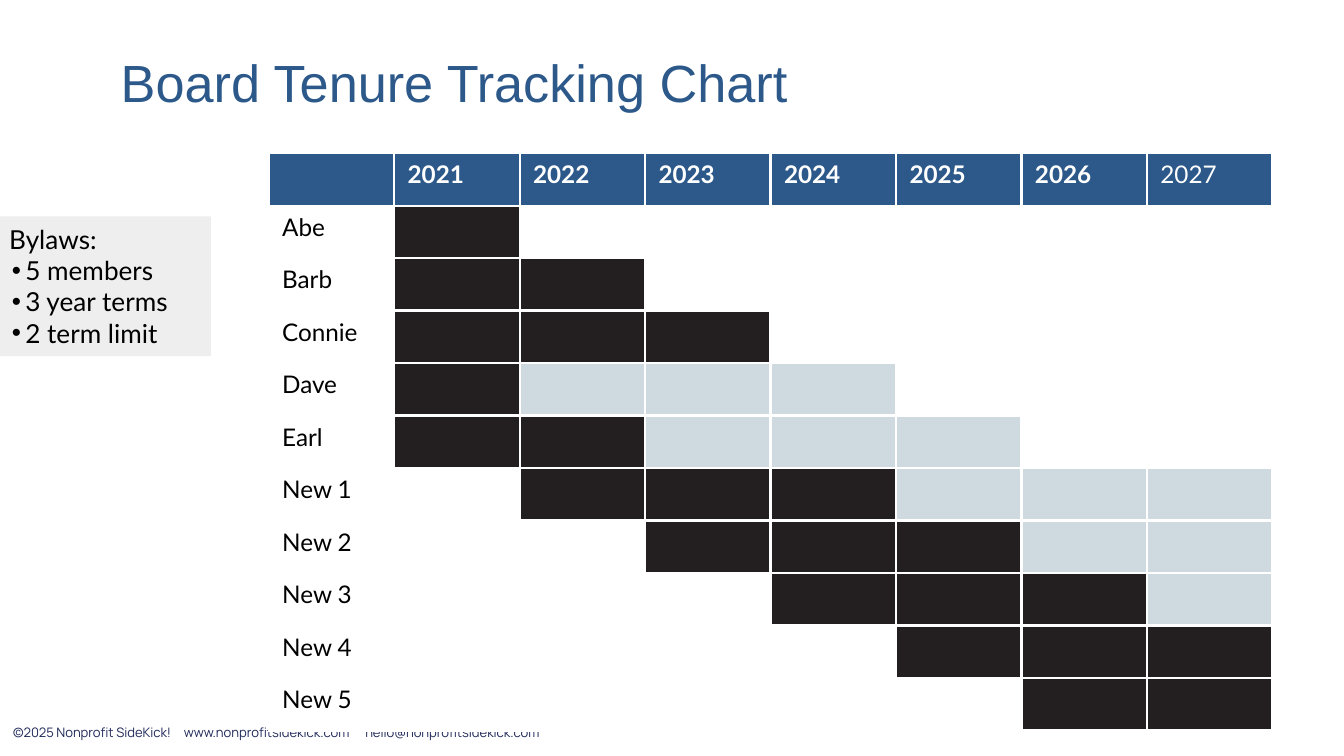
"""Build the board tenure tracking slide."""
from lxml.etree import SubElement
from pptx import Presentation
from pptx.dml.color import RGBColor
from pptx.enum.shapes import MSO_SHAPE
from pptx.enum.text import MSO_ANCHOR, PP_ALIGN
from pptx.oxml.ns import qn
from pptx.util import Inches, Pt

BLUE = RGBColor(0x2C, 0x59, 0x8A)
NAVY = RGBColor(0x20, 0x29, 0x59)
BLACK = RGBColor(0, 0, 0)
WHITE = RGBColor(0xFF, 0xFF, 0xFF)
FIRST_TERM = RGBColor(0x23, 0x1F, 0x20)
SECOND_TERM = RGBColor(0xCF, 0xD9, 0xE0)
PANEL_GRAY = RGBColor(0xEE, 0xEE, 0xEE)


def add_run(paragraph, text, size, font, color, bold=False):
    run = paragraph.add_run()
    run.text = text
    run.font.size = Pt(size)
    run.font.name = font
    run.font.color.rgb = color
    run.font.bold = bold


def add_text_box(left, top, width, height, top_inset):
    box = slide.shapes.add_textbox(Inches(left), Inches(top), Inches(width), Inches(height))
    frame = box.text_frame
    frame.word_wrap = True
    frame.margin_left = frame.margin_right = frame.margin_bottom = Inches(0.1)
    frame.margin_top = Inches(top_inset)
    return frame.paragraphs[0]


prs = Presentation()
prs.slide_width = Inches(10)
prs.slide_height = Inches(10) * 9 // 16
slide = prs.slides.add_slide(prs.slide_layouts[6])

footer = add_text_box(0, 5.31, 7.2, 0.85, 0.14)
tab_stops = SubElement(footer._p.get_or_add_pPr(), qn("a:tabLst"))
for position in (1.27, 2.62):
    SubElement(tab_stops, qn("a:tab"), pos=str(Inches(position)), algn="l")
add_run(
    footer,
    "©2025 Nonprofit SideKick!\twww.nonprofitsidekick.com\thello@nonprofitsidekick.com",
    7, "Manrope", NAVY,
)

years = range(2021, 2028)
members = [
    ("Abe", 2021, 1, 0),
    ("Barb", 2021, 2, 0),
    ("Connie", 2021, 3, 0),
    ("Dave", 2021, 1, 3),
    ("Earl", 2021, 2, 3),
    ("New 1", 2022, 3, 3),
    ("New 2", 2023, 3, 2),
    ("New 3", 2024, 3, 1),
    ("New 4", 2025, 3, 0),
    ("New 5", 2026, 2, 0),
]
tenure = slide.shapes.add_table(
    len(members) + 1, len(years) + 1, Inches(2), Inches(1.14), Inches(7.47), Inches(4.3)
).table

for cell in tenure.iter_cells():
    cell.fill.solid()
    cell.fill.fore_color.rgb = WHITE
    cell.margin_left = cell.margin_right = Inches(0.1)
    cell.margin_top = cell.margin_bottom = Inches(0.05)
    SubElement(cell.text_frame.paragraphs[0]._p, qn("a:endParaRPr"), sz="1300")
    properties = cell._tc.get_or_add_tcPr()
    for index, side in enumerate(("a:lnL", "a:lnR", "a:lnT", "a:lnB")):
        border = properties.makeelement(qn(side), {"w": str(Pt(1.5))})
        border_fill = SubElement(border, qn("a:solidFill"))
        SubElement(border_fill, qn("a:srgbClr"), val=str(WHITE))
        properties.insert(index, border)

for column in range(len(years) + 1):
    tenure.cell(0, column).fill.fore_color.rgb = BLUE
for column, year in enumerate(years, 1):
    year_heading = tenure.cell(0, column).text_frame.paragraphs[0]
    add_run(year_heading, str(year), 13, "Lato", WHITE, bold=year < 2027)

for row, (name, start, first_term, second_term) in enumerate(members, 1):
    add_run(tenure.cell(row, 0).text_frame.paragraphs[0], name, 13, "Lato", BLACK)
    for served in range(first_term + second_term):
        term_color = FIRST_TERM if served < first_term else SECOND_TERM
        column = start - years[0] + served + 1
        tenure.cell(row, column).fill.fore_color.rgb = term_color

title = add_text_box(0.8, 0.28, 8.41, 0.59, 0.09)
add_run(title, "Board Tenure Tracking Chart", 28, "Arial", BLUE)

bylaws = slide.shapes.add_shape(
    MSO_SHAPE.RECTANGLE, Inches(-0.03), Inches(1.61), Inches(1.6), Inches(1.04)
)
bylaws.shadow.inherit = False
bylaws.fill.solid()
bylaws.fill.fore_color.rgb = PANEL_GRAY
bylaws.line.fill.background()
bylaws_text = bylaws.text_frame
bylaws_text.word_wrap = True
bylaws_text.vertical_anchor = MSO_ANCHOR.TOP
bylaws_heading = bylaws_text.paragraphs[0]
bylaws_heading.alignment = PP_ALIGN.LEFT
add_run(bylaws_heading, "Bylaws:", 14, "Lato", BLACK)
for rule in ("5 members", "3 year terms", "2 term limit"):
    item = bylaws_text.add_paragraph()
    item.alignment = PP_ALIGN.LEFT
    bullet = item._p.get_or_add_pPr()
    bullet.set("marL", str(Inches(0.12)))
    bullet.set("indent", str(Inches(-0.1)))
    bullet_color = SubElement(bullet, qn("a:buClr"))
    SubElement(bullet_color, qn("a:srgbClr"), val=str(BLACK))
    SubElement(bullet, qn("a:buFont"), typeface="Arial")
    SubElement(bullet, qn("a:buChar"), char="•")
    add_run(item, rule, 14, "Lato", BLACK)

prs.save("out.pptx")
